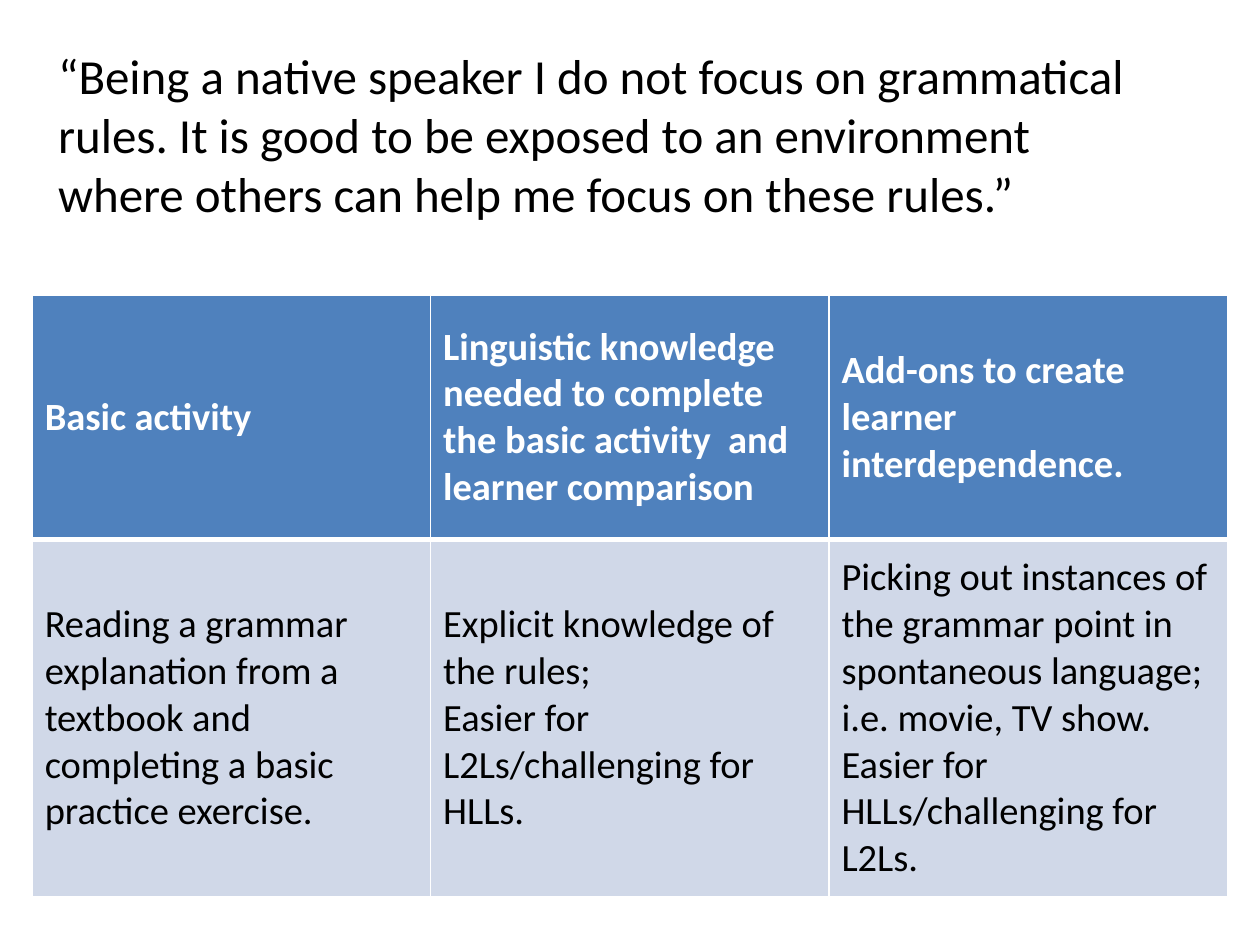
from lxml.etree import SubElement
from pptx import Presentation
from pptx.dml.color import RGBColor
from pptx.enum.text import MSO_ANCHOR as Anchor, MSO_AUTO_SIZE as AutoSize, PP_ALIGN as Align
from pptx.oxml.ns import qn
from pptx.util import Pt

WHITE = RGBColor(0xFF, 0xFF, 0xFF)
BLACK = RGBColor(0x00, 0x00, 0x00)
HEADER_BLUE = RGBColor(0x4F, 0x81, 0xBD)
BODY_BLUE = RGBColor(0xD0, 0xD8, 0xE8)

QUOTE = (
    "“Being a native speaker I do not focus on grammatical rules. "
    "It is good to be exposed to an environment where others can help me "
    "focus on these rules.”"
)
ACTIVITIES = [
    [
        "Basic activity",
        "Linguistic knowledge needed to complete the basic activity  and learner comparison",
        "Add-ons to create learner interdependence.",
    ],
    [
        "Reading a grammar explanation from a textbook and completing a basic  practice exercise.",
        "Explicit knowledge of the rules;\nEasier for L2Ls/challenging for HLLs.",
        "Picking out instances of the grammar point in spontaneous language; "
        "i.e. movie, TV show.\nEasier for HLLs/challenging for L2Ls.",
    ],
]


def write(frame, text, size, color=BLACK, bold=False, font="Calibri"):
    frame.word_wrap = True
    frame.text = text
    for paragraph in frame.paragraphs:
        paragraph.alignment = Align.LEFT
        paragraph.font.name = font
        paragraph.font.size = Pt(size)
        paragraph.font.bold = bold
        paragraph.font.color.rgb = color


def set_borders(cell, color, **widths):
    properties = cell._tc.get_or_add_tcPr()
    for position, side in enumerate(("L", "R", "T", "B")):
        width = Pt(widths.get(side, 1))
        line = properties.makeelement(qn(f"a:ln{side}"), {"w": str(width)})
        solid = SubElement(line, qn("a:solidFill"))
        SubElement(solid, qn("a:srgbClr"), val=str(color))
        properties.insert(position, line)


class SlideBuilder:
    def __init__(self, slide):
        self.slide = slide
        self.title_size = 28
        self.cell_size = 22

    def title(self, text, left, top, width, height):
        title = self.slide.shapes.title
        title.left, title.top = Pt(left), Pt(top)
        title.width, title.height = Pt(width), Pt(height)
        frame = title.text_frame
        frame.auto_size = AutoSize.NONE
        frame.vertical_anchor = Anchor.TOP
        write(frame, text, self.title_size)

    def table(self, rows, left, top, width, heights):
        table = self.slide.shapes.add_table(
            len(rows), len(rows[0]), Pt(left), Pt(top), Pt(width), Pt(sum(heights))
        ).table
        for row, height in zip(table.rows, heights):
            row.height = Pt(height)
        for row_index, texts in enumerate(rows):
            is_header = row_index == 0
            for column_index, text in enumerate(texts):
                cell = table.cell(row_index, column_index)
                cell.vertical_anchor = Anchor.MIDDLE
                cell.fill.solid()
                cell.fill.fore_color.rgb = HEADER_BLUE if is_header else BODY_BLUE
                write(
                    cell.text_frame,
                    text,
                    self.cell_size,
                    color=WHITE if is_header else BLACK,
                    bold=is_header,
                )
                if is_header:
                    set_borders(cell, WHITE, B=3)
                else:
                    set_borders(cell, WHITE, T=3)


def main():
    deck = Presentation()
    deck.slide_width, deck.slide_height = Pt(720), Pt(540)
    builder = SlideBuilder(deck.slides.add_slide(deck.slide_layouts[5]))
    builder.title(QUOTE, left=26, top=22.5, width=642, height=131)
    builder.table(ACTIVITIES, left=18.4, top=168.6, width=683, heights=(139.6, 204.4))
    deck.save("out.pptx")


if __name__ == "__main__":
    main()
